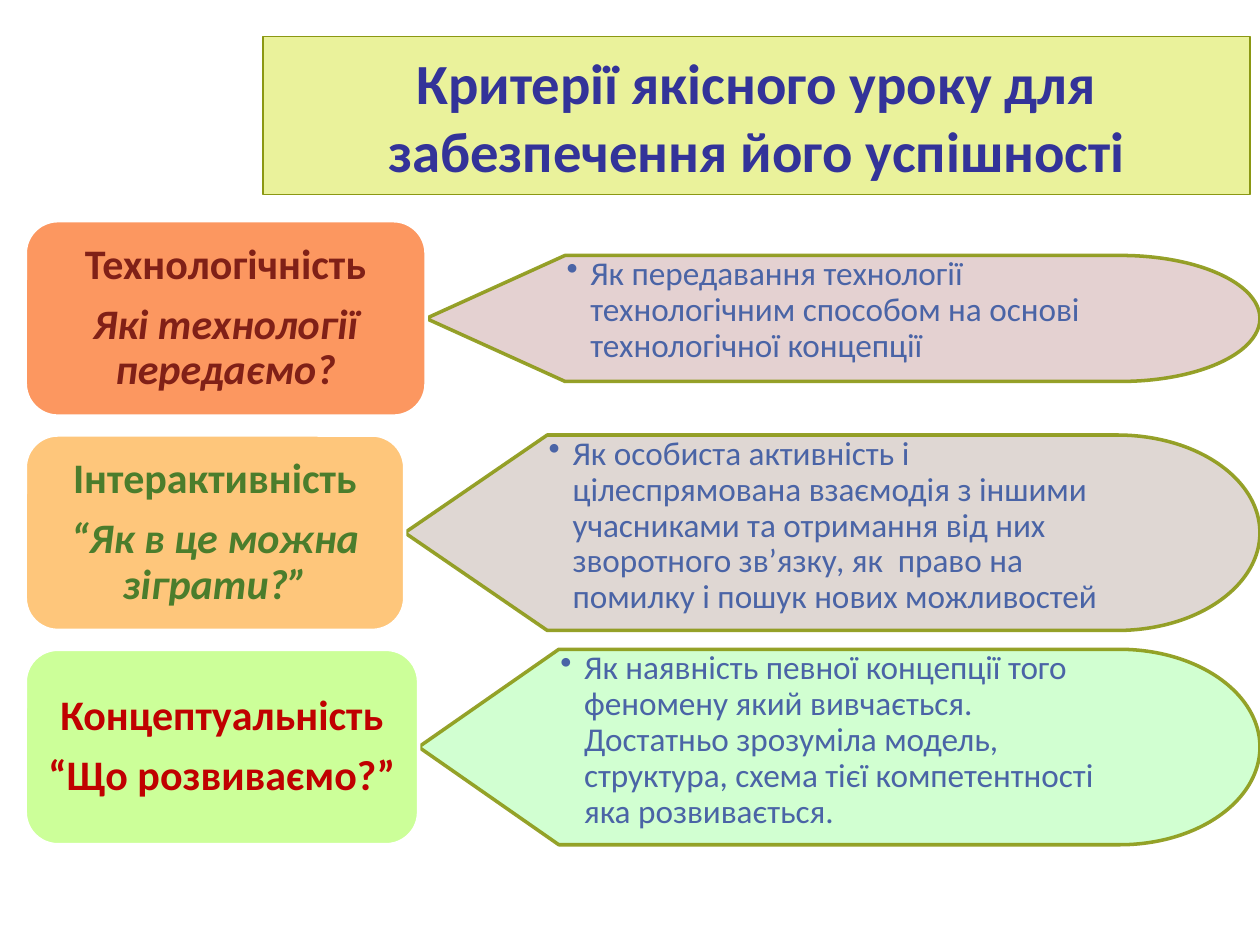
from lxml import etree
from pptx import Presentation
from pptx import util as u
from pptx.dml.color import RGBColor
from pptx.enum import shapes, text
from pptx.oxml import ns

COLORS = {
    "title_fill": "EAF29B", "title_text": "333399", "olive": "8B9813",
    "white": "FFFFFF", "answer_text": "4A64A6",
}
FONT = "Calibri"
SLIDE_WIDTH, SLIDE_HEIGHT = 25.4, 19.05
LEFT, TOP, ROW_HEIGHT, ROW_PITCH = 0.51, 4.45, 3.94, 4.32

CRITERIA = [
    {"name": "Технологічність", "question": "Які технології передаємо?", "italic": True,
     "answer": "Як передавання технології технологічним способом на основі технологічної концепції",
     "fill": "FC9760", "color": "802017", "answer_fill": "E2CDCD",
     "width": 8.08, "answer_height": 2.54},
    {"name": "Інтерактивність", "question": "“Як в це можна зіграти?”", "italic": True,
     "answer": "Як особиста активність і цілеспрямована взаємодія з іншими учасниками та "
               "отримання від них зворотного зв’язку, як  право на помилку і пошук нових можливостей",
     "fill": "FEC67B", "color": "4B7D2C", "answer_fill": "DCD3CF",
     "width": 7.65, "answer_height": 3.94},
    {"name": "Концептуальність", "question": "“Що розвиваємо?”", "italic": False,
     "answer": "Як наявність певної концепції того феномену який вивчається. Достатньо зрозуміла "
               "модель, структура, схема тієї компетентності яка розвивається.",
     "fill": "CCFF99", "color": "C00000", "answer_fill": "CCFFCC",
     "width": 7.93, "answer_height": 3.94},
]


def set_alpha(fill_format_parent, percent):
    for color in fill_format_parent.findall(ns.qn("a:solidFill") + "/" + ns.qn("a:srgbClr")):
        etree.SubElement(color, ns.qn("a:alpha")).set("val", str(percent * 1000))


def add_box(slide, kind, box, fill, line, line_width):
    shape = slide.shapes.add_shape(kind, *(u.Cm(length) for length in box))
    shape.shadow.inherit = False
    shape.fill.solid()
    shape.fill.fore_color.rgb = RGBColor.from_string(fill)
    shape.line.color.rgb = RGBColor.from_string(line)
    shape.line.width = u.Pt(line_width)
    shape.text_frame.word_wrap = True
    return shape


def add_run(paragraph, words, size, color, bold=False, italic=False):
    run = paragraph.add_run()
    run.text = words
    run.font.name = FONT
    run.font.size = u.Pt(size)
    run.font.bold = bold
    run.font.italic = italic
    run.font.color.rgb = RGBColor.from_string(color)


def add_title(slide, box):
    shape = add_box(slide, shapes.MSO_SHAPE.RECTANGLE, box,
                    COLORS["title_fill"], COLORS["olive"], 0.75)
    shape.text_frame.vertical_anchor = text.MSO_ANCHOR.MIDDLE
    paragraph = shape.text_frame.paragraphs[0]
    paragraph.alignment = text.PP_ALIGN.CENTER
    add_run(paragraph, "Критерії якісного уроку для забезпечення його успішності",
            32.4, COLORS["title_text"], bold=True)


def add_answer(slide, box, criterion):
    shape = add_box(slide, shapes.MSO_SHAPE.FLOWCHART_DISPLAY, box,
                    criterion["answer_fill"], COLORS["olive"], 2)
    properties = shape.fill._xPr
    set_alpha(properties, 90)
    set_alpha(properties.find(ns.qn("a:ln")), 90)
    frame = shape.text_frame
    frame.vertical_anchor = text.MSO_ANCHOR.TOP
    frame.margin_left = frame.margin_right = frame.margin_top = frame.margin_bottom = u.Cm(0.03)
    paragraph = frame.paragraphs[0]
    paragraph.level = 1
    paragraph.alignment = text.PP_ALIGN.LEFT
    paragraph.line_spacing = 0.9
    paragraph_properties = paragraph._p.get_or_add_pPr()
    paragraph_properties.set("marL", str(u.Cm(0.48)))
    paragraph_properties.set("indent", str(-u.Cm(0.48)))
    etree.SubElement(paragraph_properties, ns.qn("a:buChar")).set("char", "•")
    add_run(paragraph, criterion["answer"], 19, COLORS["answer_text"])


def add_question(slide, box, criterion):
    shape = add_box(slide, shapes.MSO_SHAPE.ROUNDED_RECTANGLE, box,
                    criterion["fill"], COLORS["white"], 2)
    frame = shape.text_frame
    frame.vertical_anchor = text.MSO_ANCHOR.MIDDLE
    lines = [(criterion["name"], False), (criterion["question"], criterion["italic"])]
    for index, (words, italic) in enumerate(lines):
        paragraph = frame.add_paragraph() if index else frame.paragraphs[0]
        paragraph.alignment = text.PP_ALIGN.CENTER
        paragraph.line_spacing = 0.9
        paragraph.space_after = u.Pt(8.4)
        add_run(paragraph, words, 24, criterion["color"], bold=True, italic=italic)


def add_criterion(slide, box, criterion):
    left, top, width, height = box
    question_width, answer_height = criterion["width"], criterion["answer_height"]
    add_answer(slide, (left + question_width, top + (height - answer_height) / 2,
                       width - question_width, answer_height), criterion)
    add_question(slide, (left, top, question_width, height), criterion)


def main():
    presentation = Presentation()
    presentation.slide_width = u.Cm(SLIDE_WIDTH)
    presentation.slide_height = u.Cm(SLIDE_HEIGHT)
    slide = presentation.slides.add_slide(presentation.slide_layouts[6])
    add_title(slide, (5.3, 0.73, 19.9, 3.2))
    for row, criterion in enumerate(CRITERIA):
        add_criterion(slide, (LEFT, TOP + row * ROW_PITCH, SLIDE_WIDTH - LEFT, ROW_HEIGHT), criterion)
    presentation.save("out.pptx")


if __name__ == "__main__":
    main()
